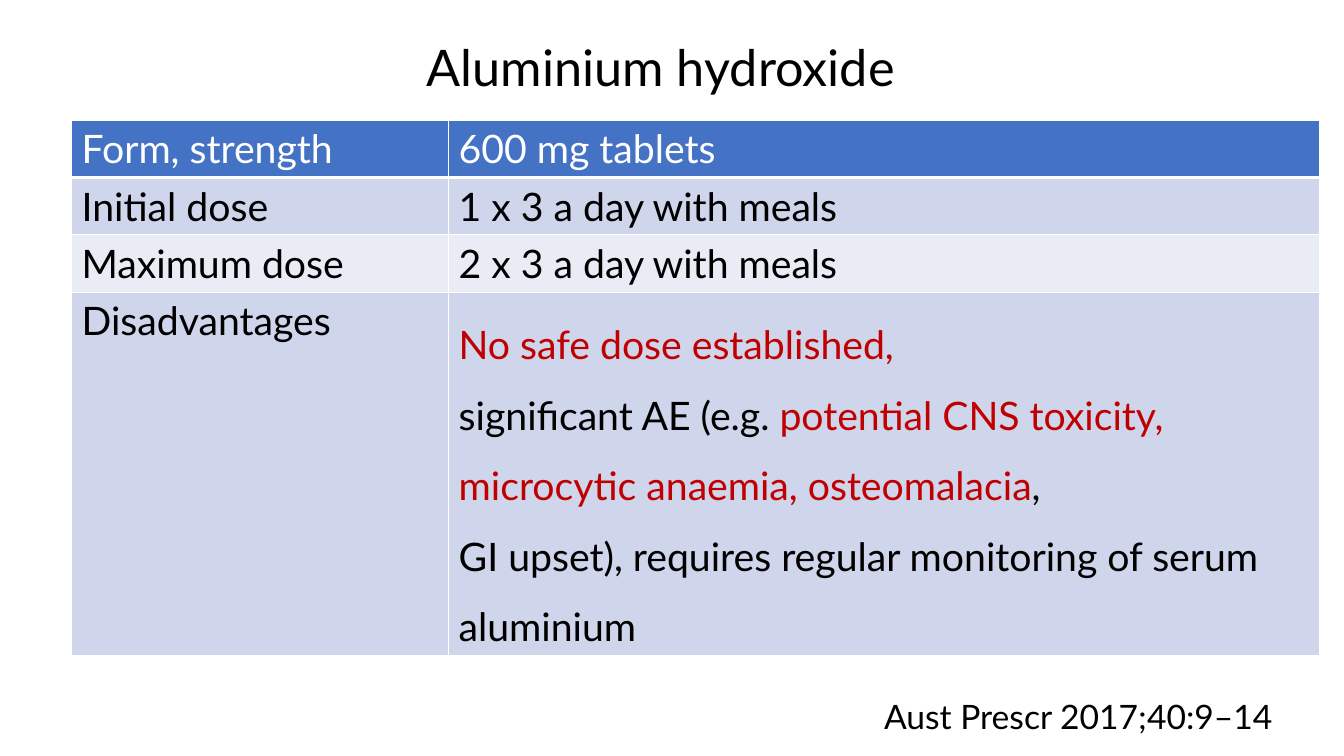
"""Build the aluminium hydroxide dosing slide."""
from dataclasses import dataclass

from lxml import etree
from pptx import Presentation
from pptx.dml.color import RGBColor
from pptx.enum.text import PP_ALIGN
from pptx.oxml.ns import qn
from pptx.util import Inches, Pt

CENTER, LEFT = PP_ALIGN.CENTER, PP_ALIGN.LEFT
FONT = "Lato"
BLACK, WHITE, RED = "000000", "FFFFFF", "C00000"
HEADER, BAND_DARK, BAND_LIGHT = "4472C4", "CFD5EA", "E9EBF5"


@dataclass
class Span:
    text: str
    color: str = BLACK


@dataclass
class Label:
    text: str
    left: float
    top: float
    width: float
    height: float
    size: int
    align: PP_ALIGN = LEFT
    spacing: float = 1.0


@dataclass
class Row:
    name: str
    paragraphs: list[list[Span]]
    height: float
    fill: str
    color: str = BLACK
    spacing: float = 1.0


LABELS = [
    Label("Aluminium hydroxide", -0.11, 0.01, 13.33, 0.93, 36, CENTER, 1.5),
    Label("Aust Prescr 2017;40:9–14", 8.67, 6.85, 4.24, 0.5, 24),
]
DISADVANTAGES = [
    [Span("No safe dose established,", RED)],
    [Span("significant AE (e.g. "),
     Span("potential CNS toxicity, microcytic anaemia, osteomalacia", RED),
     Span(",")],
    [Span("GI upset), requires regular monitoring of serum aluminium")],
]
ROWS = [
    Row("Form, strength", [[Span("600 mg tablets", WHITE)]], 0.57, HEADER, WHITE),
    Row("Initial dose", [[Span("1 x 3 a day with meals")]], 0.57, BAND_DARK),
    Row("Maximum dose", [[Span("2 x 3 a day with meals")]], 0.57, BAND_LIGHT),
    Row("Disadvantages", DISADVANTAGES, 3.53, BAND_DARK, spacing=1.5),
]
COLUMN_WIDTHS = [3.74, 8.64]


def rgb(color: str) -> RGBColor:
    return RGBColor.from_string(color)


def write(tf, paragraphs: list[list[Span]], size: int, spacing: float = 1.0,
          align: PP_ALIGN = LEFT) -> None:
    for i, spans in enumerate(paragraphs):
        p = tf.add_paragraph() if i else tf.paragraphs[0]
        p.alignment = align
        p.line_spacing = spacing
        for span in spans:
            r = p.add_run()
            r.text = span.text
            r.font.name = FONT
            r.font.size = Pt(size)
            r.font.bold = False
            r.font.color.rgb = rgb(span.color)


def add_label(slide, label: Label) -> None:
    box = slide.shapes.add_textbox(Inches(label.left), Inches(label.top),
                                   Inches(label.width), Inches(label.height))
    box.text_frame.word_wrap = True
    write(box.text_frame, [[Span(label.text)]], label.size, label.spacing, label.align)


def set_borders(cell, bottom: float) -> None:
    tc_pr = cell._tc.get_or_add_tcPr()
    for side, width in (("L", 1), ("R", 1), ("T", 1), ("B", bottom)):
        ln = etree.SubElement(tc_pr, qn(f"a:ln{side}"), w=str(Pt(width)))
        fill = etree.SubElement(ln, qn("a:solidFill"))
        etree.SubElement(fill, qn("a:srgbClr"), val=WHITE)


def add_dose_table(slide, rows: list[Row]) -> None:
    frame = slide.shapes.add_table(
        len(rows), len(COLUMN_WIDTHS), Inches(0.71), Inches(1.19),
        Inches(sum(COLUMN_WIDTHS)), Inches(sum(row.height for row in rows)))
    table = frame.table
    for column, width in zip(table.columns, COLUMN_WIDTHS):
        column.width = Inches(width)
    for i, row in enumerate(rows):
        table.rows[i].height = Inches(row.height)
        name_cell, value_cell = table.rows[i].cells
        for cell in (name_cell, value_cell):
            set_borders(cell, bottom=1 if i else 3)
            cell.fill.solid()
            cell.fill.fore_color.rgb = rgb(row.fill)
        write(name_cell.text_frame, [[Span(row.name, row.color)]], 28)
        write(value_cell.text_frame, row.paragraphs, 28, row.spacing)


def main() -> None:
    prs = Presentation()
    prs.slide_width, prs.slide_height = Inches(13.33), Inches(7.5)
    slide = prs.slides.add_slide(prs.slide_layouts[6])
    for label in LABELS:
        add_label(slide, label)
    add_dose_table(slide, ROWS)
    prs.save("out.pptx")


if __name__ == "__main__":
    main()
